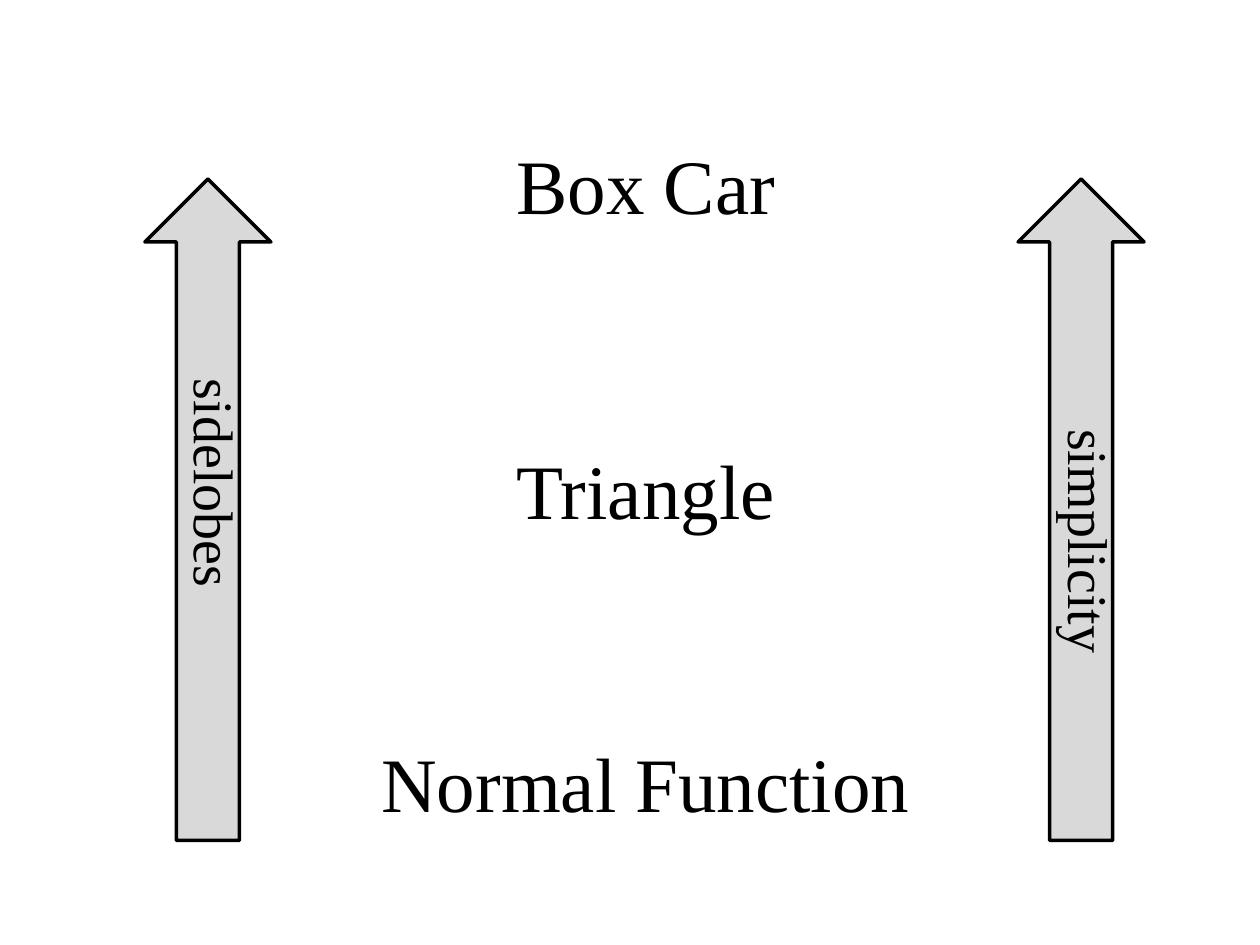
import pptx
import pptx.util
import pptx.dml.color
import pptx.enum.shapes
import pptx.enum.text

Inches = pptx.util.Inches
FONT = "Times New Roman"
BLACK = "000000"
GREY = "D9D9D9"


def color(value):
    return pptx.dml.color.RGBColor.from_string(value)


def place(sp, left, top, width, height):
    sp.left, sp.top = Inches(left), Inches(top)
    sp.width, sp.height = Inches(width), Inches(height)


def write(sp, text, size):
    """Fill a shape with one centred line of text."""
    tf = sp.text_frame
    tf.word_wrap = True
    tf.auto_size = pptx.enum.text.MSO_AUTO_SIZE.NONE
    tf.vertical_anchor = pptx.enum.text.MSO_ANCHOR.MIDDLE
    p = tf.paragraphs[0]
    p.alignment = pptx.enum.text.PP_ALIGN.CENTER
    r = p.add_run()
    r.text = text
    r.font.name = FONT
    r.font.size = pptx.util.Pt(size)
    r.font.color.rgb = color(BLACK)


def add_label(s, text, size, box, rotation=0):
    sp = s.shapes.add_textbox(*map(Inches, box))
    sp.rotation = rotation
    write(sp, text, size)


def add_arrow(s, left):
    """Add a tall block arrow pointing up."""
    sp = s.shapes.add_shape(
        pptx.enum.shapes.MSO_SHAPE.DOWN_ARROW,
        Inches(left), Inches(1.42), Inches(1), Inches(5.25))
    sp.rotation = 180
    sp.shadow.inherit = False
    sp.fill.solid()
    sp.fill.fore_color.rgb = color(GREY)
    sp.line.color.rgb = color(BLACK)
    sp.line.width = pptx.util.Pt(2)


def main():
    prs = pptx.Presentation()
    prs.slide_width, prs.slide_height = Inches(10), Inches(7.5)
    s = prs.slides.add_slide(prs.slide_layouts[5])

    # Window functions, with the title at the bottom
    place(s.shapes.title, 2, 5.58, 6.25, 1.25)
    write(s.shapes.title, "Normal Function", 44)
    for text, top in (("Box Car", 0.83), ("Triangle", 3.25)):
        add_label(s, text, 44, (2, top, 6.25, 1.25))

    # Arrows with their sideways labels
    for left, text, box in (
        (8.08, "simplicity", (6.28, 3.67, 4.75, 1.25)),
        (1.15, "sidelobes", (-1.12, 3.21, 5.67, 1.25)),
    ):
        add_arrow(s, left)
        add_label(s, text, 32, box, rotation=90)

    prs.save("out.pptx")


if __name__ == "__main__":
    main()
